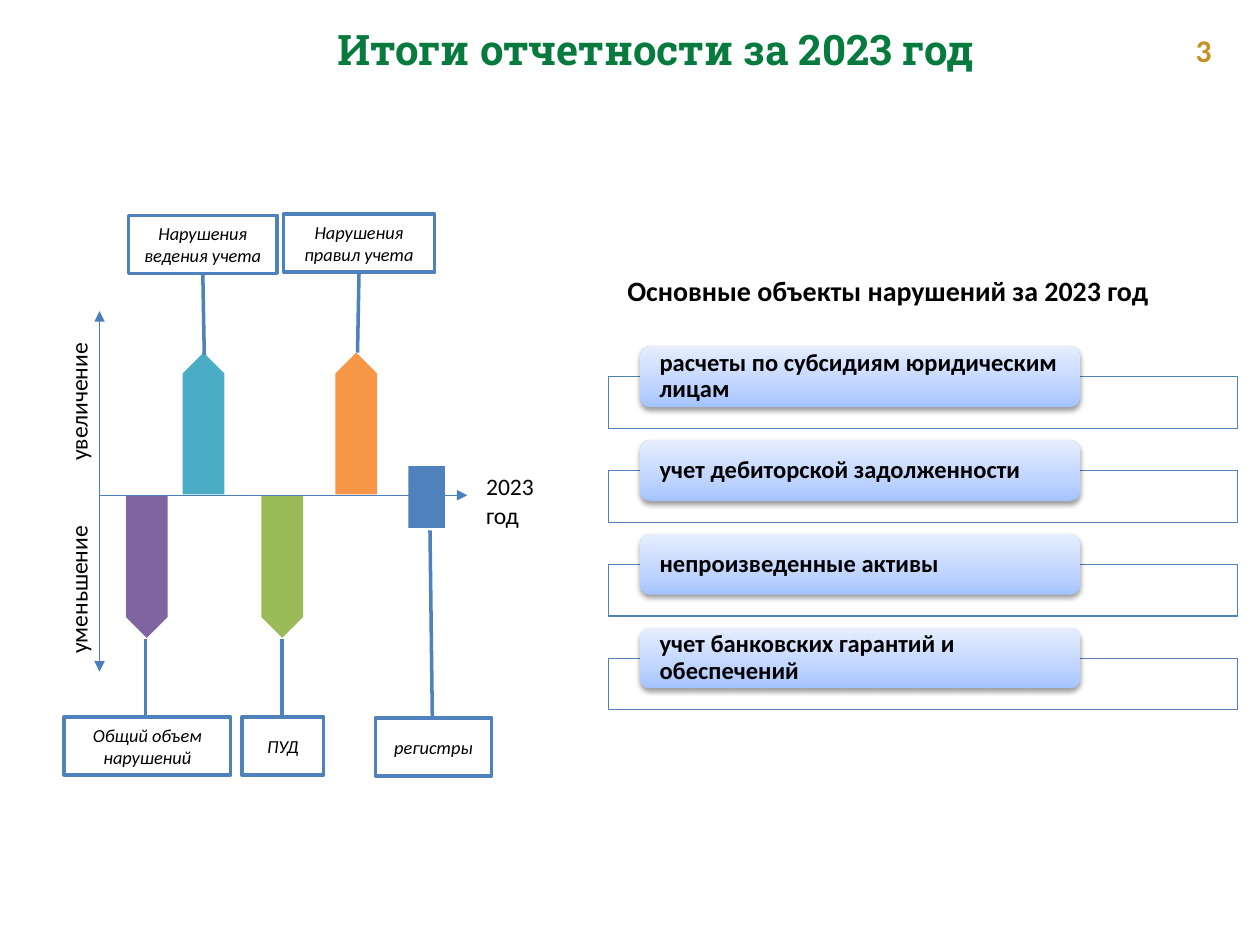
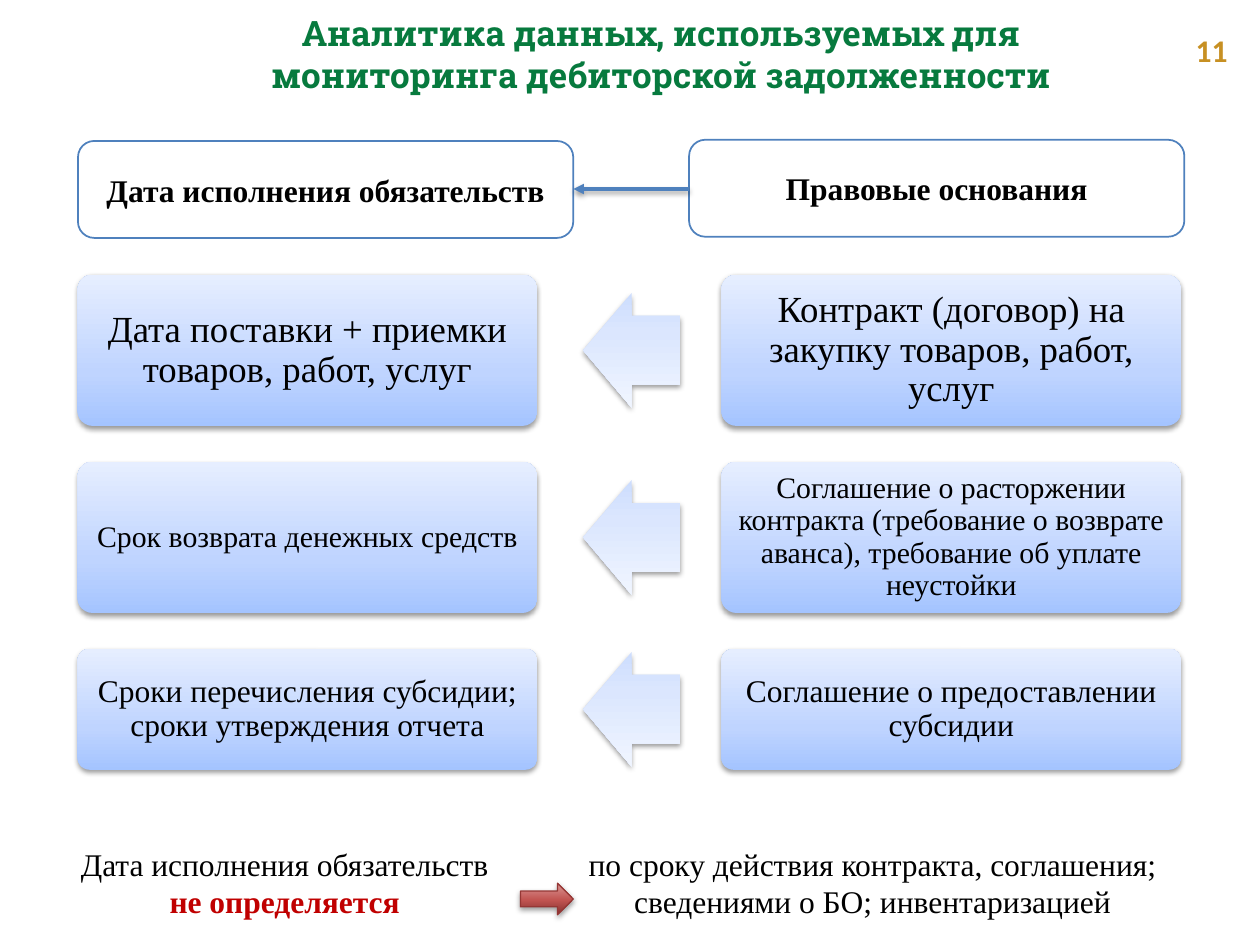
from lxml import etree
from pptx import Presentation
from pptx.dml.color import RGBColor
from pptx.enum.shapes import MSO_CONNECTOR, MSO_SHAPE
from pptx.enum.text import MSO_ANCHOR, PP_ALIGN
from pptx.oxml.ns import qn
from pptx.util import Pt

RECT, ROUND = MSO_SHAPE.RECTANGLE, MSO_SHAPE.ROUNDED_RECTANGLE
CALLOUT, PLATE, ARROW = MSO_SHAPE.LINE_CALLOUT_1, MSO_SHAPE.PENTAGON, MSO_SHAPE.RIGHT_ARROW
STRAIGHT = MSO_CONNECTOR.STRAIGHT
LEFT, CENTER = PP_ALIGN.LEFT, PP_ALIGN.CENTER
TOP, MIDDLE = MSO_ANCHOR.TOP, MSO_ANCHOR.MIDDLE

COLORS = {
    "white": "FFFFFF", "text": "000000", "title": "077A3E", "number": "C79023",
    "blue": "4F81BD", "axis": "4B7EBC", "purple": "8064A2", "teal": "4BACC6",
    "orange": "F79646", "green": "9BBB59", "alert": "C00000", "alert_line": "953735",
}
GRADIENTS = {
    "panel": [(0, "A4C4FF"), (35, "BFD4FF"), (100, "E6EEFF")],
    "arrow": [(0, "CDDDFE"), (35, "DBE6FE"), (100, "F0F5FF")],
    "alert": [(0, "85312F"), (48, "C25552"), (100, "D99694")],
}
BODY, SLAB, SERIF = "Calibri", "Roboto Slab", "Times New Roman"

RESULTS_TITLE = "Итоги отчетности за 2023 год"
ANALYTICS_TITLE = "Аналитика данных, используемых для мониторинга дебиторской задолженности"

AXIS_Y = 283
AXES = [((56.9, AXIS_Y), (267.1, AXIS_Y), ("tailEnd",)),
        ((56.9, 177.8), (56.9, 383.8), ("headEnd", "tailEnd"))]
AXIS_LABELS = [("увеличение", 176.4), ("уменьшение", 283.7)]
PLATES = [(83.9, "down", "purple"), (116.3, "up", "teal"),
          (203.6, "up", "orange"), (161.3, "down", "green")]
ABOVE, BELOW = (0.99, 0.5), (-0.01, 0.49)
CALLOUTS = [
    ("Нарушения ведения учета", 73.4, 123.1, 85, ABOVE, (2.41, 0.51)),
    ("Нарушения правил учета", 162, 122.4, 86.4, ABOVE, (2.39, 0.49)),
    ("Общий объем нарушений", 36.7, 409.7, 95, BELOW, (-1.35, 0.49)),
    ("ПУД", 138.2, 409.7, 46.8, BELOW, (-1.35, 0.49)),
    ("регистры", 214.6, 410.4, 66.2, BELOW, (-3.24, 0.47)),
]
OBJECTS_HEADING = "Основные объекты нарушений за 2023 год"
OBJECTS = [
    "расчеты по субсидиям юридическим лицам",
    "учет дебиторской задолженности",
    "непроизведенные активы",
    "учет банковских гарантий и обеспечений",
]
HEADERS = [("Дата исполнения обязательств", 44.6, 80.6), ("Правовые основания", 393.8, 79.9)]
DEADLINES = [
    ("Дата поставки + приемки товаров, работ, услуг",
     "Контракт (договор) на закупку товаров, работ, услуг", 86.4, 21),
    ("Срок возврата денежных средств",
     "Соглашение о расторжении контракта (требование о возврате аванса), "
     "требование об уплате неустойки", 86.4, 17),
    ("Сроки перечисления субсидии; сроки утверждения отчета",
     "Соглашение о предоставлении субсидии", 69.1, 18),
]
UNDEFINED = [("Дата исполнения обязательств ", {}),
             ("не определяется", {"color": "alert", "bold": True})]
SOURCES = "по сроку действия контракта, соглашения; сведениями о БО; инвентаризацией"


def rgb(name):
    return RGBColor.from_string(COLORS[name])


def write(shape, text, size=18, font=BODY, color="text", bold=False, italic=False,
          align=LEFT, anchor=TOP, insets=(7.2, 3.6, 7.2, 3.6), spacing=None, vertical=None):
    frame = shape.text_frame
    frame.word_wrap = True
    frame.vertical_anchor = anchor
    frame.margin_left, frame.margin_top, frame.margin_right, frame.margin_bottom = map(Pt, insets)
    if vertical:
        frame._txBody.bodyPr.set("vert", vertical)
    para = frame.paragraphs[0]
    para.alignment = align
    if spacing:
        para.line_spacing = spacing
    for words, changes in [(text, {})] if isinstance(text, str) else text:
        span = para.add_run()
        span.text = words
        span.font.name = font
        span.font.size = Pt(size)
        span.font.bold = changes.get("bold", bold)
        span.font.italic = italic
        span.font.color.rgb = rgb(changes.get("color", color))


def add_text(page, place, text, **style):
    write(page.shapes.add_textbox(*map(Pt, place)), text, **style)


def add_shadow(effects, blur=3.1, distance=1.6, opacity=38):
    shadow = etree.SubElement(effects, qn("a:outerShdw"), blurRad=str(Pt(blur)),
                              dist=str(Pt(distance)), dir="5400000", rotWithShape="0")
    black = etree.SubElement(shadow, qn("a:srgbClr"), val="000000")
    etree.SubElement(black, qn("a:alpha"), val=str(opacity * 1000))


def fill_gradient(shape, stops):
    shape.fill.gradient()
    shape.fill.gradient_angle = 90
    stop_list = shape._element.spPr.find(qn("a:gradFill")).find(qn("a:gsLst"))
    for old in list(stop_list):
        stop_list.remove(old)
    for position, color in stops:
        stop = etree.SubElement(stop_list, qn("a:gs"), pos=str(position * 1000))
        etree.SubElement(stop, qn("a:srgbClr"), val=color)


def add_box(page, kind, place, fill="white", gradient=None, line=None, width=1,
            adjust=(), rotation=0):
    box = page.shapes.add_shape(kind, *map(Pt, place))
    box.rotation = rotation
    box.shadow.inherit = False
    for index, value in enumerate(adjust):
        box.adjustments[index] = value
    if gradient:
        fill_gradient(box, GRADIENTS[gradient])
        add_shadow(box._element.spPr.find(qn("a:effectLst")))
    else:
        box.fill.solid()
        box.fill.fore_color.rgb = rgb(fill)
    if line:
        box.line.color.rgb = rgb(line)
        box.line.width = Pt(width)
    else:
        box.line.fill.background()
    return box


def add_line(page, start, end, color, width, heads, shadow=False):
    line = page.shapes.add_connector(STRAIGHT, *map(Pt, start + end))
    line.line.color.rgb = rgb(color)
    line.line.width = Pt(width)
    for head in heads:
        etree.SubElement(line.line._get_or_add_ln(), qn("a:" + head), type="triangle")
    effects = etree.SubElement(line._element.spPr, qn("a:effectLst"))
    if shadow:
        add_shadow(effects)


def add_page(deck, title, place, size, number):
    page = deck.slides.add_slide(deck.slide_layouts[6])
    add_text(page, place, title, size=size, font=SLAB, color="title", bold=True,
             align=CENTER, insets=(11.5, 3.6, 7.2, 3.6))
    add_text(page, (676.1, 14.4, 43.9, 28.8), number, color="number", bold=True)
    return page


def build_results(deck):
    page = add_page(deck, RESULTS_TITLE, (37.4, 10.1, 670.3, 36), 24, "3")
    for start, end, heads in AXES:
        add_line(page, start, end, "axis", 0.75, heads)
    add_text(page, (270.7, 266.4, 61.2, 43.2), "2023 год", size=13.5)
    for label, top in AXIS_LABELS:
        add_text(page, (32.4, top, 24.5, 106.6), label, size=13.5, align=CENTER,
                 anchor=MIDDLE, vertical="vert270")
    length, thickness = 81, 23.8
    for middle, direction, color in PLATES:
        side, rotation = (1, 90) if direction == "down" else (-1, 270)
        center_y = AXIS_Y + side * (length / 2 + 0.5)
        place = (middle - length / 2, center_y - thickness / 2, length, thickness)
        add_box(page, PLATE, place, fill=color, rotation=rotation)
    add_box(page, RECT, (233.3, 266.4, 20.9, 35.3), fill="blue")
    for text, left, top, width, root, tip in CALLOUTS:
        box = add_box(page, CALLOUT, (left, top, width, 33.1), line="blue", width=2,
                      adjust=root + tip)
        write(box, text, size=10.5, italic=True, align=CENTER, anchor=MIDDLE)

    add_text(page, (351.4, 152.6, 319, 26.6), OBJECTS_HEADING, size=16, bold=True)
    for index, text in enumerate(OBJECTS):
        top = 198 + index * 53.6
        add_box(page, RECT, (347.8, top + 17.3, 359.3, 29.5), line="blue", width=0.75)
        box = add_box(page, ROUND, (365.8, top, 251.3, 34.6), gradient="panel")
        write(box, text, size=14, bold=True, anchor=MIDDLE, spacing=0.9,
              insets=(9.4, 0, 9.4, 0))


def build_analytics(deck):
    page = add_page(deck, ANALYTICS_TITLE, (118.8, 2.9, 513.4, 55.4), 20, "11")
    serif = {"font": SERIF, "align": CENTER, "anchor": MIDDLE}
    for text, left, top in HEADERS:
        box = add_box(page, ROUND, (left, top, 283, 55.4), line="blue")
        write(box, text, bold=True, **serif)
    add_line(page, (393.8, 108), (327.6, 108), "blue", 2, ("tailEnd",), shadow=True)

    top, gap, arrow_height = 157, 20.5, 65.5
    for deadline, basis, height, size in DEADLINES:
        for text, left in ((deadline, 44.3), (basis, 412.2)):
            box = add_box(page, ROUND, (left, top, 262.8, height), gradient="panel",
                          adjust=(0.1,))
            write(box, text, size=size, spacing=0.9, insets=(5.4,) * 4, **serif)
        place = (333.2, top + (height - arrow_height) / 2, 55.4, arrow_height)
        add_box(page, ARROW, place, gradient="arrow", adjust=(0.6, 0.5), rotation=180)
        top += height + gap

    for text, left, width in ((UNDEFINED, 28.1, 269.3), (SOURCES, 297.4, 402.5)):
        write(add_box(page, ROUND, (left, 476.6, width, 55.4)), text, **serif)
    add_box(page, ARROW, (297.4, 504.7, 30.2, 18), gradient="alert", line="alert_line",
            width=0.75)


def main():
    deck = Presentation()
    deck.slide_width, deck.slide_height = Pt(720), Pt(540)
    build_results(deck)
    build_analytics(deck)
    deck.save("out.pptx")


if __name__ == "__main__":
    main()
